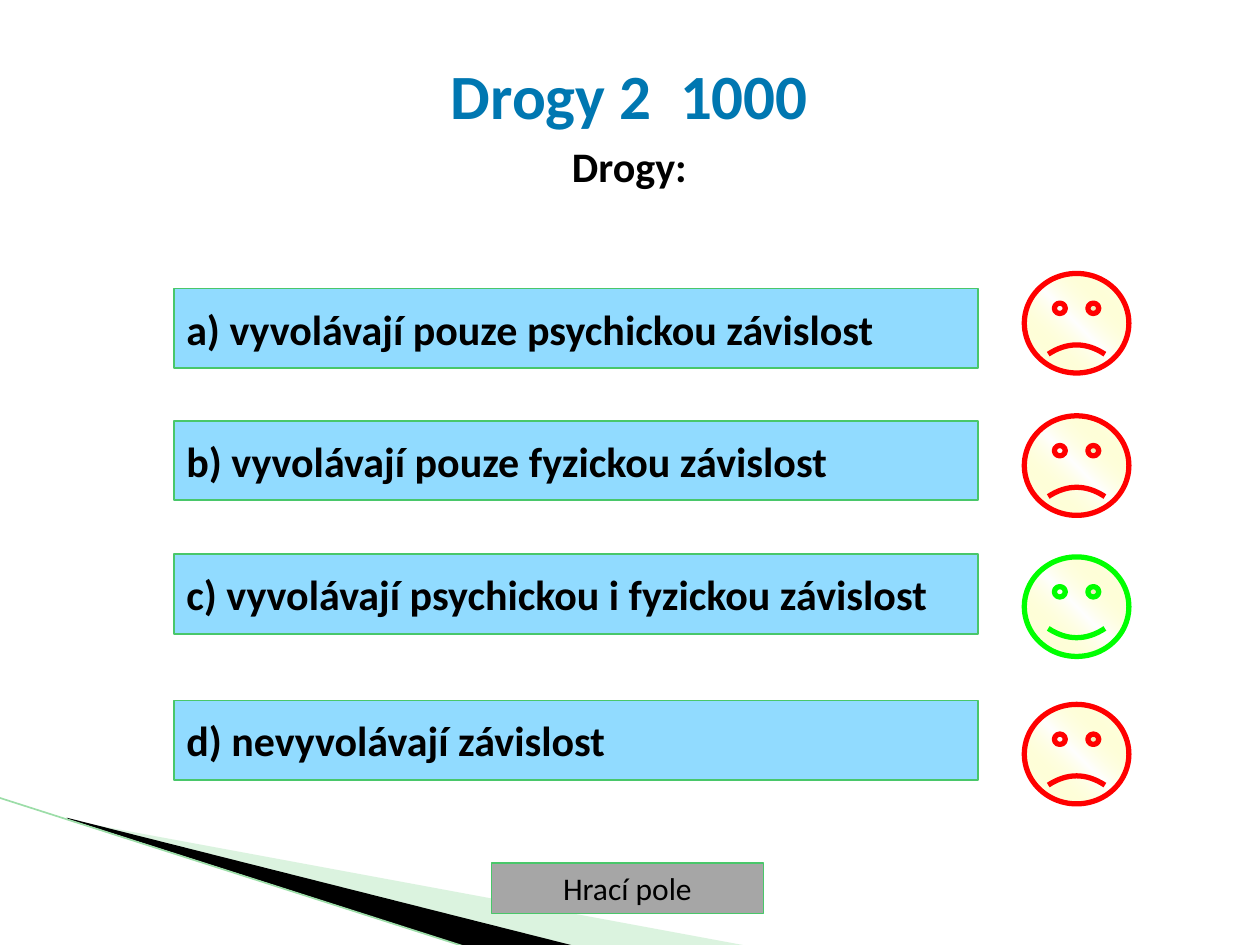
from lxml import etree
from pptx import Presentation
from pptx.dml.color import RGBColor
from pptx.enum import shapes, text
from pptx.oxml import parse_xml
from pptx.oxml.ns import nsdecls, qn
from pptx.util import Inches, Pt

FONT = "Calibri"
BLACK, GREEN, RED = "000000", "00FF00", "FF0000"
BUTTON_LINE = "49C76A"

# Answer text, button top, face top, whether it is correct
ANSWERS = [
    ("a) vyvolávají pouze psychickou závislost", 2.29, 2.17, False),
    ("b) vyvolávají pouze fyzickou závislost", 3.34, 3.3, False),
    ("c) vyvolávají psychickou i fyzickou závislost", 4.4, 4.42, True),
    ("d) nevyvolávají závislost", 5.56, 5.59, False),
]


def rgb(value):
    return RGBColor.from_string(value)


def set_font(paragraph, size, color, bold=False):
    font = paragraph.font
    font.name, font.size, font.bold = FONT, Pt(size), bold
    font.color.rgb = rgb(color)


def add_wedge(slide, points, color, opacity=None):
    corners = [(Inches(x), Inches(y)) for x, y in points]
    builder = slide.shapes.build_freeform(*corners[0])
    builder.add_line_segments(corners[1:], close=True)
    shape = builder.convert_to_shape()
    shape.shadow.inherit = False
    shape.fill.solid()
    shape.fill.fore_color.rgb = rgb(color)
    shape.line.fill.background()
    if opacity is not None:
        fill_color = shape._element.spPr.find(qn("a:solidFill"))[0]
        etree.SubElement(fill_color, qn("a:alpha")).set("val", str(opacity * 1000))


def add_edge(slide, x1, y1, x2, y2, color, width):
    line = slide.shapes.add_connector(
        shapes.MSO_CONNECTOR.STRAIGHT, Inches(x1), Inches(y1), Inches(x2), Inches(y2))
    line.line.color.rgb = rgb(color)
    line.line.width = Pt(width)
    etree.SubElement(line._element.spPr, qn("a:effectLst"))


def add_shape(slide, kind, left, top, width, height, line_color, line_width):
    shape = slide.shapes.add_shape(
        kind, Inches(left), Inches(top), Inches(width), Inches(height))
    shape.shadow.inherit = False
    shape.line.color.rgb = rgb(line_color)
    shape.line.width = Pt(line_width)
    return shape


def add_button(slide, label, box, fill, size, line_width, align, bold=False):
    shape = add_shape(slide, shapes.MSO_SHAPE.ACTION_BUTTON_CUSTOM, *box,
                      BUTTON_LINE, line_width)
    shape.fill.solid()
    shape.fill.fore_color.rgb = rgb(fill)
    frame = shape.text_frame
    frame.word_wrap = False
    frame.vertical_anchor = text.MSO_ANCHOR.MIDDLE
    paragraph = frame.paragraphs[0]
    paragraph.text = label
    paragraph.alignment = align
    set_font(paragraph, size, BLACK, bold)


def add_face(slide, top, happy):
    face = add_shape(slide, shapes.MSO_SHAPE.SMILEY_FACE, 8.13, top, 0.83, 0.79,
                     GREEN if happy else RED, 3)
    face.adjustments[0] = 0.047 if happy else -0.047
    # White to clear yellow and back, along the diagonal
    gradient = parse_xml(
        f'<a:gradFill {nsdecls("a")} rotWithShape="1"><a:gsLst>'
        '<a:gs pos="0"><a:srgbClr val="FFFFFF"/></a:gs>'
        '<a:gs pos="50000"><a:srgbClr val="FFFF66"><a:alpha val="0"/></a:srgbClr></a:gs>'
        '<a:gs pos="100000"><a:srgbClr val="FFFFFF"/></a:gs>'
        '</a:gsLst><a:lin ang="18900000" scaled="1"/></a:gradFill>')
    face._element.spPr.find(qn("a:prstGeom")).addnext(gradient)


def add_heading(slide):
    box = slide.shapes.add_textbox(Inches(0.39), Inches(0.4), Inches(9.21), Inches(0.75))
    frame = box.text_frame
    frame.word_wrap = True
    title, question = frame.paragraphs[0], frame.add_paragraph()
    for paragraph, words, size, color in (
            (title, "Drogy 2  1000", 36, "0077B1"), (question, "Drogy:", 24, BLACK)):
        paragraph.text = words
        paragraph.alignment = text.PP_ALIGN.CENTER
        properties = paragraph._p.get_or_add_pPr()
        properties.set("marL", str(Inches(0.38)))
        properties.set("indent", str(-Inches(0.38)))
        set_font(paragraph, size, color, bold=True)
    question.space_before = Pt(5)


def main():
    presentation = Presentation()
    presentation.slide_width, presentation.slide_height = Inches(10), Inches(7.5)
    slide = presentation.slides.add_slide(presentation.slide_layouts[6])

    # Corner decoration
    add_wedge(slide, [(0.55, 6.51), (5.95, 7.51), (4.56, 7.51), (0.55, 6.5)], "A5E1AF", 40)
    add_wedge(slide, [(0.53, 6.49), (4.57, 7.51), (3.72, 7.52), (0.54, 6.5)], BLACK)
    add_edge(slide, -0.01, 6.33, 3.71, 7.52, "9CDDA8", 0.95)

    # Heading and the button back to the board
    add_button(slide, "Hrací pole", (3.9, 6.85, 2.16, 0.4), "A6A6A6", 18, 0.75,
               text.PP_ALIGN.CENTER)
    add_heading(slide)

    # Answers with their faces
    for label, button_top, face_top, correct in ANSWERS:
        add_button(slide, label, (1.38, button_top, 6.38, 0.63), "91DBFF", 24, 1,
                   text.PP_ALIGN.LEFT, bold=True)
        add_face(slide, face_top, correct)

    presentation.save("out.pptx")


if __name__ == "__main__":
    main()
